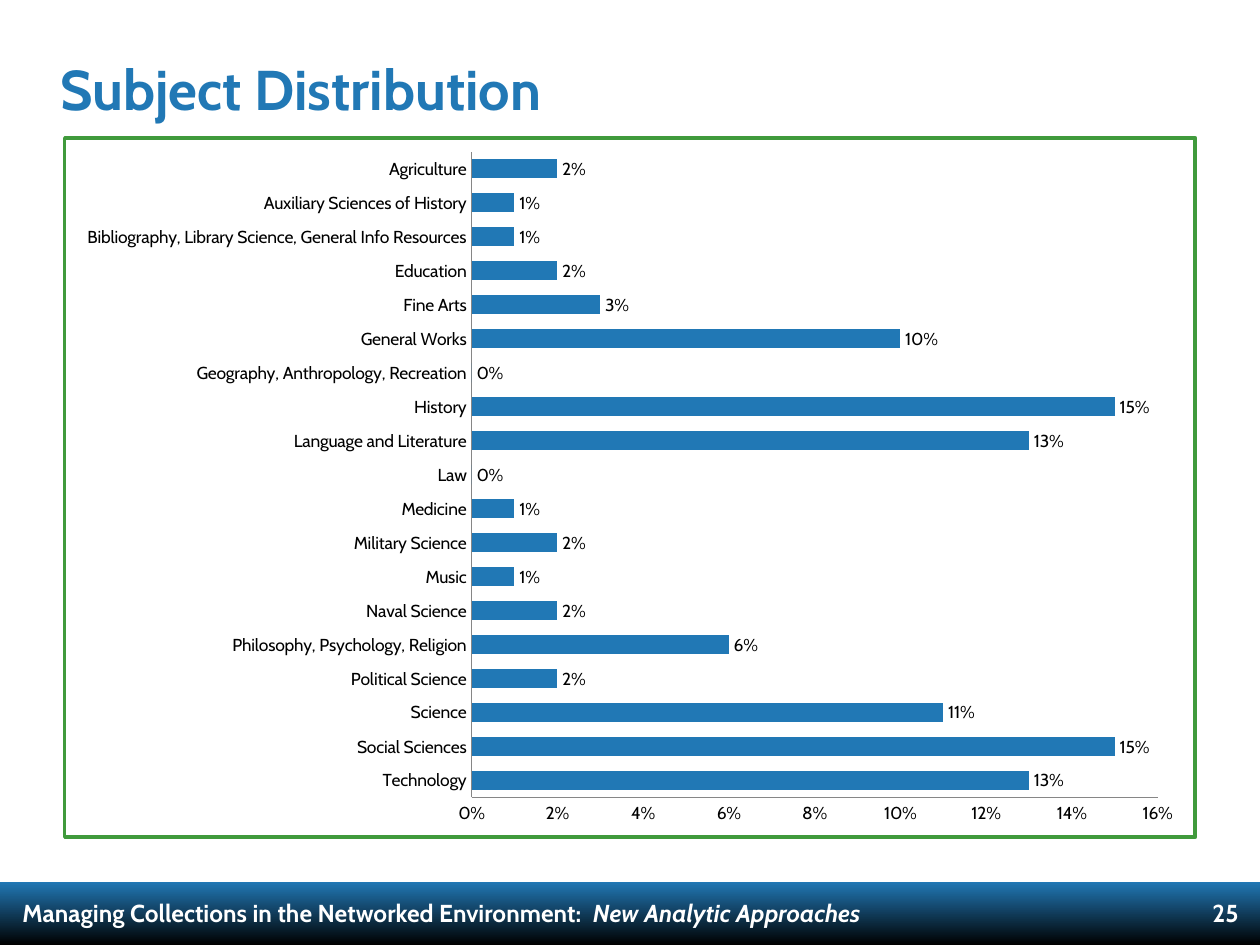
from lxml.etree import SubElement
from pptx import Presentation
from pptx.chart.data import CategoryChartData
from pptx.dml.color import RGBColor
from pptx.enum.chart import XL_CHART_TYPE, XL_LABEL_POSITION, XL_TICK_MARK
from pptx.enum.shapes import MSO_SHAPE
from pptx.enum.text import MSO_ANCHOR, PP_ALIGN
from pptx.oxml import parse_xml
from pptx.oxml.ns import nsdecls, qn
from pptx.util import Emu, Pt

PIXEL = 914400 / 126
FONT = "Cabin"
BLUE, GREEN, GRAY = "2178B5", "409A3C", "868686"
BLACK, WHITE = "000000", "FFFFFF"

SUBJECTS = [
    ("Technology", 0.13),
    ("Social Sciences", 0.15),
    ("Science", 0.11),
    ("Political Science", 0.02),
    ("Philosophy, Psychology, Religion", 0.06),
    ("Naval Science", 0.02),
    ("Music", 0.01),
    ("Military Science", 0.02),
    ("Medicine", 0.01),
    ("Law", 0),
    ("Language and Literature", 0.13),
    ("History", 0.15),
    ("Geography, Anthropology, Recreation", 0),
    ("General Works", 0.1),
    ("Fine Arts", 0.03),
    ("Education", 0.02),
    ("Bibliography, Library Science, General Info Resources", 0.01),
    ("Auxiliary Sciences of History", 0.01),
    ("Agriculture", 0.02),
]


def px(length):
    return Emu(round(length * PIXEL))


def color(value):
    return RGBColor.from_string(value)


def write(paragraph, text, size=14, fill=WHITE, bold=True, italic=False):
    run = paragraph.add_run()
    run.text = text
    font = run.font
    font.name = FONT
    font.size = Pt(size)
    font.bold = bold
    font.italic = italic
    font.color.rgb = color(fill)


def add_title(slide, left, top, width, height):
    title = slide.shapes.title
    title.left, title.top = px(left), px(top)
    title.width, title.height = px(width), px(height)
    frame = title.text_frame
    frame.margin_left = frame.margin_right = 0
    frame.margin_top = frame.margin_bottom = 0
    frame.vertical_anchor = MSO_ANCHOR.MIDDLE
    paragraph = frame.paragraphs[0]
    paragraph.alignment = PP_ALIGN.LEFT
    write(paragraph, "Subject Distribution", size=32, fill=BLUE)


def add_footer_text(slide, left, top, width, height, alignment):
    box = slide.shapes.add_textbox(px(left), px(top), px(width), px(height))
    box.text_frame.word_wrap = True
    paragraph = box.text_frame.paragraphs[0]
    paragraph.alignment = alignment
    paragraph.line_spacing = 1.2
    return paragraph


def add_footer(slide, left, top, width, height):
    band = slide.shapes.add_shape(
        MSO_SHAPE.RECTANGLE, px(left), px(top), px(width), px(height))
    band.shadow.inherit = False
    band.line.fill.background()
    band.fill.gradient()
    band.fill.gradient_angle = 270
    for stop, value in zip(band.fill.gradient_stops, (BLUE, BLACK)):
        stop.color.rgb = color(value)
    caption = add_footer_text(
        slide, left + 10, top + 4, 1081, 45, PP_ALIGN.LEFT)
    write(caption, "Managing Collections in the Networked Environment:  ")
    write(caption, "New Analytic Approaches", italic=True)
    number = add_footer_text(
        slide, left + width - 93, top + 4, 84, 45, PP_ALIGN.RIGHT)
    write(number, "25")


def add_border(chart, value, width):
    properties = parse_xml(f"<c:spPr {nsdecls('c', 'a')}/>")
    SubElement(properties, qn("a:noFill"))
    line = SubElement(properties, qn("a:ln"), w=str(Pt(width)))
    fill = SubElement(line, qn("a:solidFill"))
    SubElement(fill, qn("a:srgbClr"), val=value)
    SubElement(line, qn("a:round"))
    chart.element.find(qn("c:chart")).addnext(properties)


def add_subject_chart(slide, left, top, width, height):
    data = CategoryChartData(number_format="0%")
    data.categories = [name for name, share in SUBJECTS]
    data.add_series("Series 1", [share for name, share in SUBJECTS])
    chart = slide.shapes.add_chart(
        XL_CHART_TYPE.BAR_CLUSTERED,
        px(left), px(top), px(width), px(height), data).chart
    chart.has_legend = False
    chart.has_title = False
    chart.font.name = FONT
    chart.font.size = Pt(10)
    chart.font.color.rgb = color(BLACK)
    for axis in (chart.category_axis, chart.value_axis):
        axis.has_major_gridlines = False
        axis.major_tick_mark = XL_TICK_MARK.NONE
        axis.minor_tick_mark = XL_TICK_MARK.NONE
        axis.format.line.color.rgb = color(GRAY)
        axis.format.line.width = Pt(0.75)
    chart.value_axis.minimum_scale = 0
    chart.value_axis.maximum_scale = 0.16
    chart.value_axis.major_unit = 0.02
    chart.value_axis.tick_labels.number_format = "0%"
    chart.value_axis.tick_labels.number_format_is_linked = False
    plot = chart.plots[0]
    plot.gap_width = 75
    plot.vary_by_categories = False
    fill = plot.series[0].format.fill
    fill.solid()
    fill.fore_color.rgb = color(BLUE)
    plot.has_data_labels = True
    labels = plot.data_labels
    labels.show_value = True
    labels.number_format = "0%"
    labels.number_format_is_linked = False
    labels.position = XL_LABEL_POSITION.OUTSIDE_END
    add_border(chart, GREEN, 2)


def main():
    presentation = Presentation()
    presentation.slide_width = px(1260)
    presentation.slide_height = px(945)
    slide = presentation.slides.add_slide(presentation.slide_layouts[5])
    add_footer(slide, 0, 882, 1260, 63)
    add_title(slide, 60, 20, 1105, 137)
    add_subject_chart(slide, 63, 136, 1134, 703)
    presentation.save("out.pptx")


if __name__ == "__main__":
    main()
